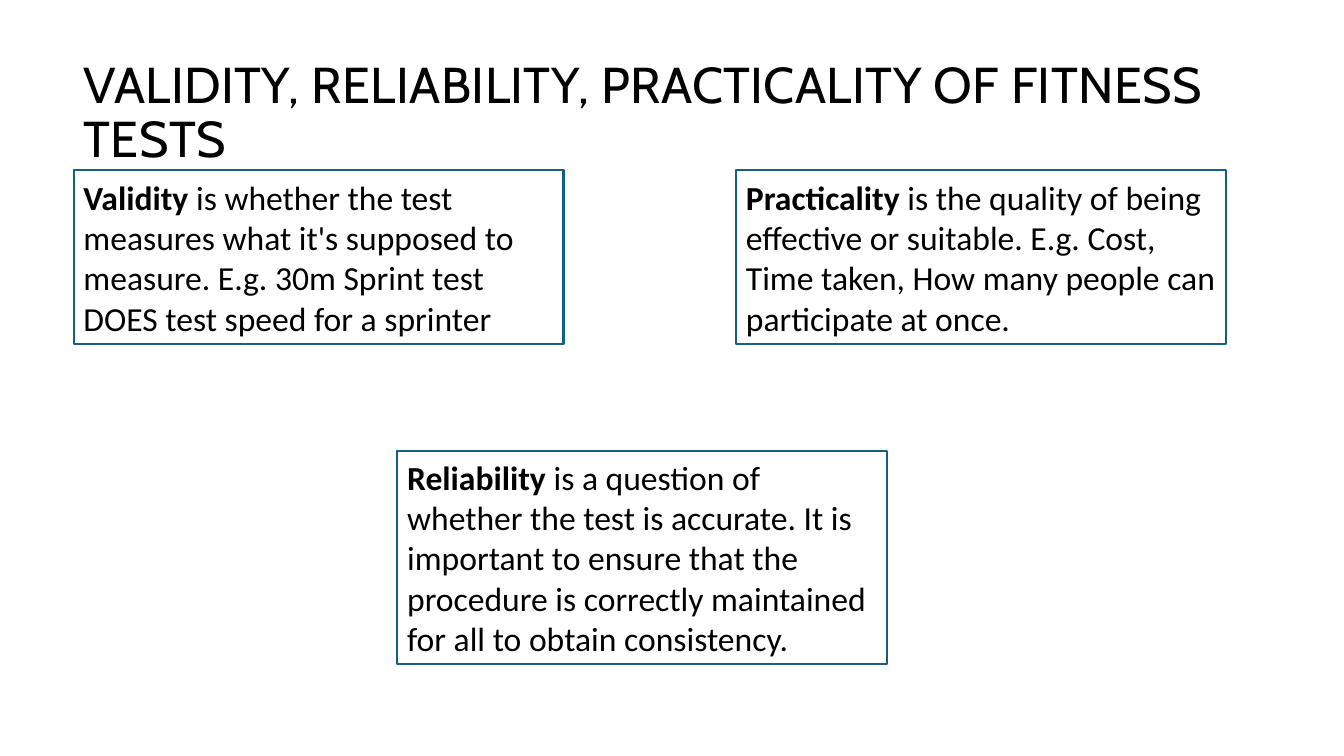
from pptx import Presentation
from pptx.dml.color import RGBColor
from pptx.enum.shapes import MSO_SHAPE
from pptx.enum.text import MSO_ANCHOR, MSO_AUTO_SIZE, PP_ALIGN
from pptx.util import Inches, Pt

BLACK = RGBColor(0x00, 0x00, 0x00)
WHITE = RGBColor(0xFF, 0xFF, 0xFF)
BORDER_BLUE = RGBColor(0x15, 0x60, 0x82)
RECTANGLE = MSO_SHAPE.RECTANGLE
TOP, MIDDLE = MSO_ANCHOR.TOP, MSO_ANCHOR.MIDDLE
NO_AUTOFIT, GROW_SHAPE = MSO_AUTO_SIZE.NONE, MSO_AUTO_SIZE.SHAPE_TO_FIT_TEXT
LEFT = PP_ALIGN.LEFT

TITLE = "VALIDITY, RELIABILITY, PRACTICALITY OF FITNESS TESTS"
TITLE_BOX = (0.73, 0.54, 12.45, 0.75)
CARD_WIDTH = 4.86
UPPER_TOP = 1.69
DEFINITIONS = [
    ((0.73, UPPER_TOP, CARD_WIDTH, 1.72), "Validity",
     " is whether the test measures what it's supposed to measure. "
     "E.g. 30m Sprint test DOES test speed for a sprinter"),
    ((7.3, UPPER_TOP, CARD_WIDTH, 1.72), "Practicality",
     " is the quality of being effective or suitable. "
     "E.g. Cost, Time taken, How many people can participate at once."),
    ((3.94, 4.47, CARD_WIDTH, 2.12), "Reliability",
     " is a question of whether the test is accurate. It is important to ensure "
     "that the procedure is correctly maintained for all to obtain consistency."),
]


def format_run(run, font_name, size, bold=False):
    run.font.name = font_name
    run.font.size = Pt(size)
    run.font.bold = bold
    run.font.color.rgb = BLACK


def place_title(slide, box):
    title = slide.shapes.title
    title.left, title.top, title.width, title.height = map(Inches, box)
    text_frame = title.text_frame
    text_frame.text = TITLE
    text_frame.word_wrap = True
    text_frame.auto_size = NO_AUTOFIT
    text_frame.vertical_anchor = TOP
    paragraph = text_frame.paragraphs[0]
    paragraph.alignment = LEFT
    paragraph.line_spacing = 0.9
    run = paragraph.runs[0]
    format_run(run, "Cabin", 36)
    run._r.get_or_add_rPr().set("spc", "30")


def add_definition(slide, box, term, meaning):
    """Draw an outlined box that opens with the term in bold."""
    card = slide.shapes.add_shape(RECTANGLE, *map(Inches, box))
    card.shadow.inherit = False
    card.fill.solid()
    card.fill.fore_color.rgb = WHITE
    card.line.color.rgb = BORDER_BLUE
    card.line.width = Pt(1.5)
    text_frame = card.text_frame
    text_frame.word_wrap = True
    text_frame.auto_size = GROW_SHAPE
    text_frame.vertical_anchor = MIDDLE
    paragraph = text_frame.paragraphs[0]
    paragraph.alignment = LEFT
    for text, bold in ((term, True), (meaning, False)):
        run = paragraph.add_run()
        run.text = text
        format_run(run, "Calibri", 24, bold)


def main():
    presentation = Presentation()
    presentation.slide_width = Inches(13.33)
    presentation.slide_height = Inches(7.5)
    slide = presentation.slides.add_slide(presentation.slide_layouts[5])
    slide.background.fill.solid()
    slide.background.fill.fore_color.rgb = WHITE
    place_title(slide, TITLE_BOX)
    for box, term, meaning in DEFINITIONS:
        add_definition(slide, box, term, meaning)
    presentation.save("out.pptx")


if __name__ == "__main__":
    main()
